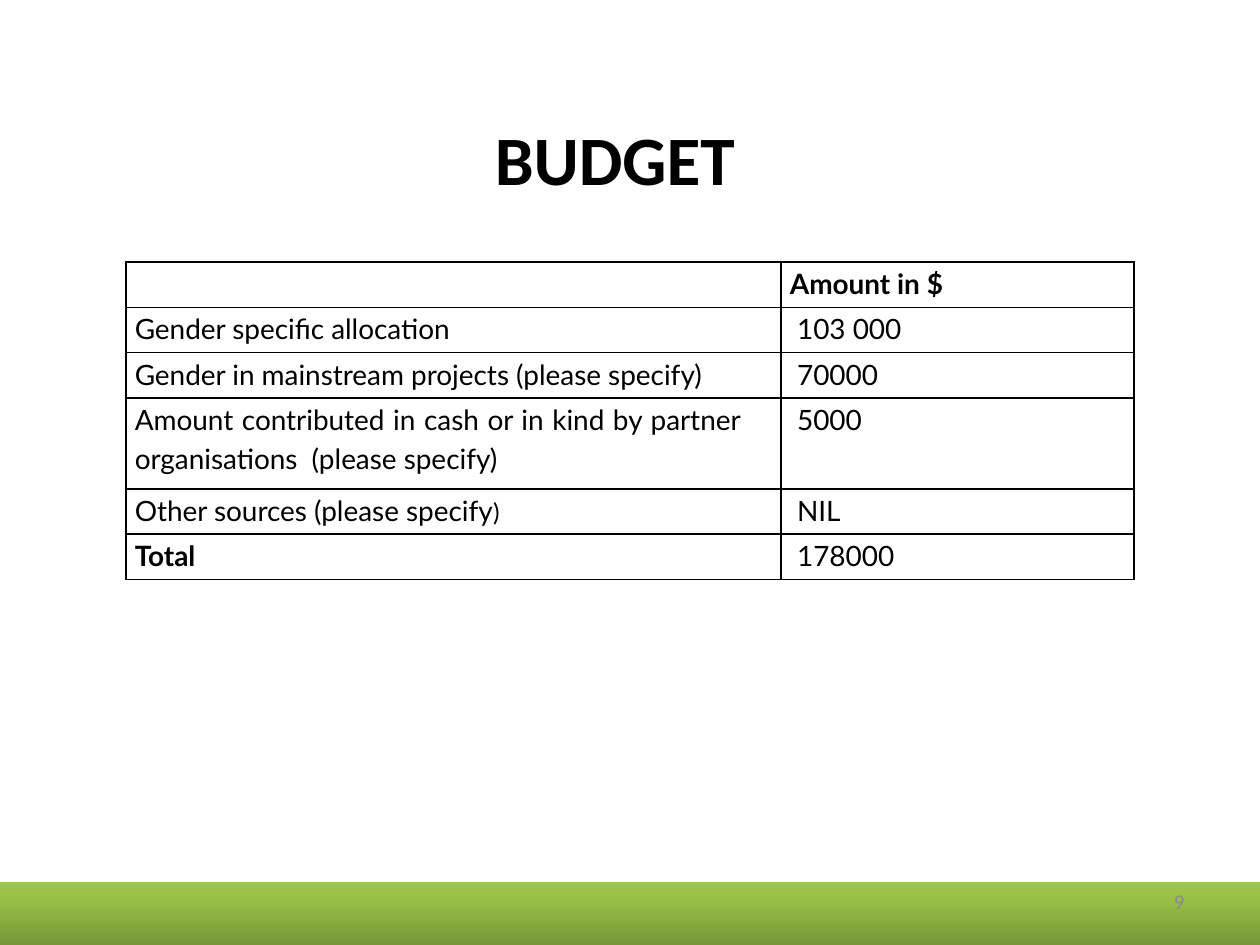
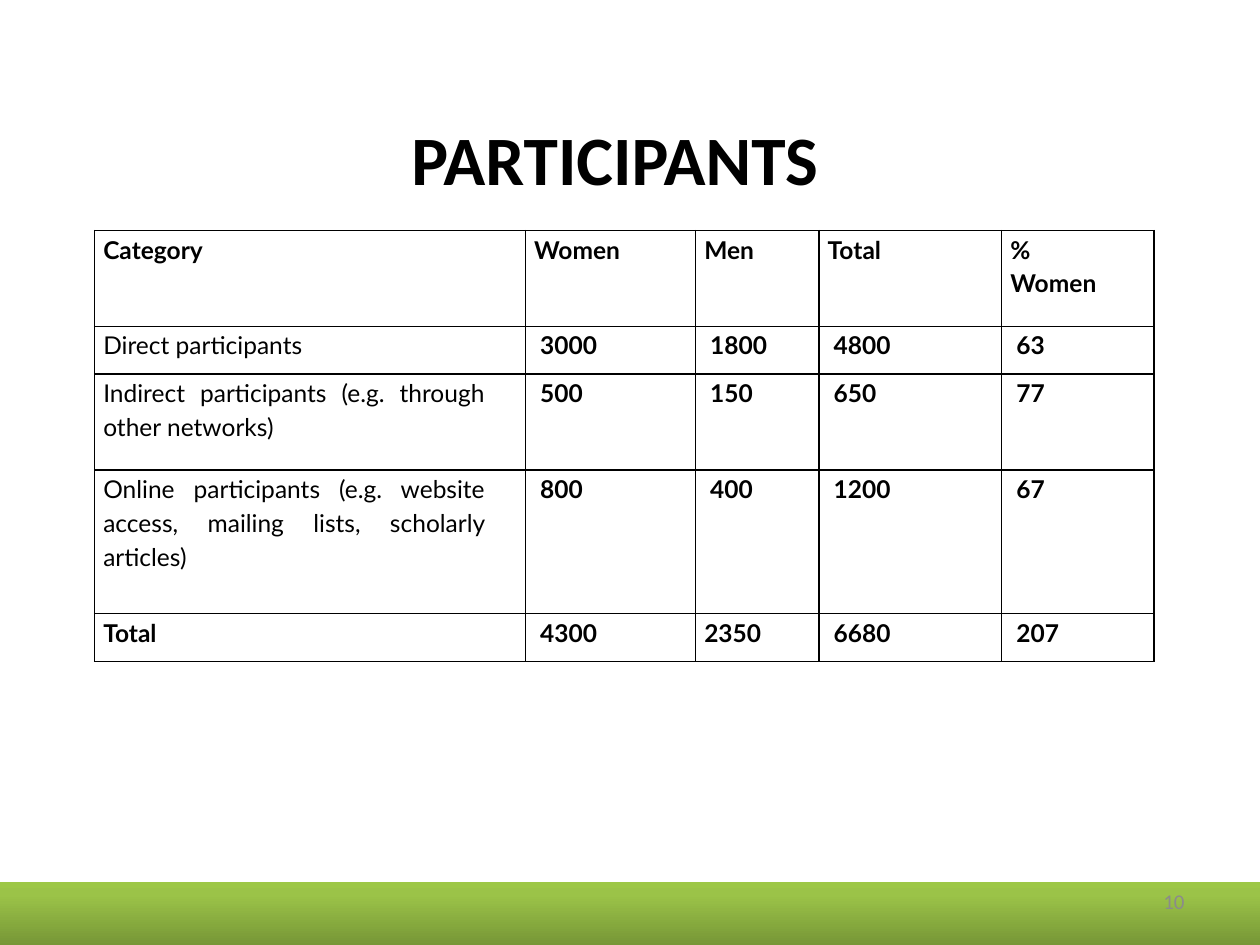
from copy import deepcopy
from dataclasses import dataclass

from lxml import etree
from pptx import Presentation
from pptx.dml.color import RGBColor
from pptx.enum import shapes, text
from pptx.oxml import ns
from pptx.util import Inches, Pt


@dataclass(frozen=True)
class Theme:
    black: str = "000000"
    grey: str = "8B8B8B"
    band: tuple = ((0, "779737"), (0.8, "9BC348"), (1, "9DC746"))
    title_font: str = "Calibri"
    table_font: str = "Lato"
    title_size: float = 39.6
    number_size: float = 12
    small_size: float = 14
    border: float = 1
    line_spacing: float = 1.15


@dataclass(frozen=True)
class TableSlide:
    title: str
    number: int
    left: float
    top: float
    cols: tuple
    heights: tuple
    size: float
    bold_values: bool
    rows: tuple  # "|" starts a smaller run inside a cell


THEME = Theme()

BUDGET = TableSlide(
    title="BUDGET", number=9, left=1, top=2.08,
    cols=(5.2, 2.8), heights=(0.36, 0.36, 0.36, 0.72, 0.36, 0.36),
    size=16, bold_values=False,
    rows=(
        ("", "Amount in $"),
        ("Gender specific allocation", " 103 000"),
        ("Gender in mainstream projects (please specify)", " 70000"),
        ("Amount contributed in cash or in kind by partner organisations  (please specify)", " 5000"),
        ("Other sources (please specify|)", " NIL"),
        ("Total", " 178000"),
    ),
)

PARTICIPANTS = TableSlide(
    title="PARTICIPANTS", number=10, left=0.75, top=1.83,
    cols=(3.42, 1.35, 0.98, 1.45, 1.21), heights=(0.76, 0.38, 0.76, 1.14, 0.38),
    size=14, bold_values=True,
    rows=(
        ("Category", "Women", "Men", "Total", "% Women"),
        ("Direct participants", " 3000", " 1800", " 4800", " 63"),
        ("Indirect participants (e.g. through other networks)", " 500", " 150", " 650", " 77"),
        ("Online participants (e.g. website access, mailing lists, scholarly articles)",
         " 800", " 400", " 1200", " 67"),
        ("Total", " 4300", "2350", " 6680", " 207"),
    ),
)


def style_run(r, font: str, size: float, color: str, bold: bool = False) -> None:
    r.font.name, r.font.size, r.font.bold = font, Pt(size), bold
    r.font.color.rgb = RGBColor.from_string(color)


def add_label(s, content: str, box: tuple, align, font_style: tuple) -> None:
    tf = s.shapes.add_textbox(*map(Inches, box)).text_frame
    tf.word_wrap = True
    tf.vertical_anchor = text.MSO_ANCHOR.MIDDLE
    tf.margin_top = tf.margin_bottom = 0
    tf.text = content
    p = tf.paragraphs[0]
    p.alignment = align
    style_run(p.runs[0], *font_style)


def add_band(s) -> None:
    sp = s.shapes.add_shape(shapes.MSO_SHAPE.RECTANGLE, 0, Inches(7), Inches(10), Inches(0.5))
    sp.shadow.inherit = False
    sp.line.fill.background()
    sp.fill.gradient()
    sp.fill.gradient_angle = 90
    # The default gradient has two stops; the band needs a third
    stops = sp._element.spPr.find(".//" + ns.qn("a:gsLst"))
    stops.append(deepcopy(stops[0]))
    for stop, (position, color) in zip(sp.fill.gradient_stops, THEME.band):
        stop.position = position
        stop.color.rgb = RGBColor.from_string(color)


def set_borders(cell) -> None:
    tc_pr = cell._tc.get_or_add_tcPr()
    for i, side in enumerate(("lnL", "lnR", "lnT", "lnB")):
        ln = etree.Element(ns.qn(f"a:{side}"), w=str(Pt(THEME.border)))
        fill = etree.SubElement(ln, ns.qn("a:solidFill"))
        etree.SubElement(fill, ns.qn("a:srgbClr"), val=THEME.black)
        tc_pr.insert(i, ln)


def fill_cell(cell, content: str, size: float, bold: bool) -> None:
    cell.margin_left, cell.margin_right = Inches(0.07), Inches(0.32)
    cell.margin_top = cell.margin_bottom = 0
    cell.fill.background()
    set_borders(cell)
    p = cell.text_frame.paragraphs[0]
    p.alignment = text.PP_ALIGN.JUSTIFY
    p.line_spacing = THEME.line_spacing
    p.font.size = Pt(size)
    for part, part_size in zip(content.split("|"), (size, THEME.small_size)):
        if part:
            r = p.add_run()
            r.text = part
            style_run(r, THEME.table_font, part_size, THEME.black, bold)


def add_grid(s, spec: TableSlide) -> None:
    frame = s.shapes.add_table(
        len(spec.rows), len(spec.cols), Inches(spec.left), Inches(spec.top),
        Inches(sum(spec.cols)), Inches(sum(spec.heights)))
    table = frame.table
    table.first_row = table.horz_banding = False
    for column, width in zip(table.columns, spec.cols):
        column.width = Inches(width)
    for row, height in zip(table.rows, spec.heights):
        row.height = Inches(height)
    last = len(spec.rows) - 1
    for i, row in enumerate(spec.rows):
        for j, content in enumerate(row):
            # Header and total label are always bold
            bold = i == 0 or (i == last if j == 0 else spec.bold_values)
            fill_cell(table.cell(i, j), content, spec.size, bold)


def add_table_slide(prs, spec: TableSlide) -> None:
    s = prs.slides.add_slide(prs.slide_layouts[6])
    add_label(s, spec.title, (0.38, 0.92, 9, 0.67), text.PP_ALIGN.CENTER,
              (THEME.title_font, THEME.title_size, THEME.black, True))
    add_grid(s, spec)
    add_band(s)
    add_label(s, str(spec.number), (7.17, 6.95, 2.33, 0.4), text.PP_ALIGN.RIGHT,
              (THEME.title_font, THEME.number_size, THEME.grey))


def main() -> None:
    prs = Presentation()
    prs.slide_width, prs.slide_height = Inches(10), Inches(7.5)
    for spec in (BUDGET, PARTICIPANTS):
        add_table_slide(prs, spec)
    prs.save("out.pptx")


if __name__ == "__main__":
    main()
